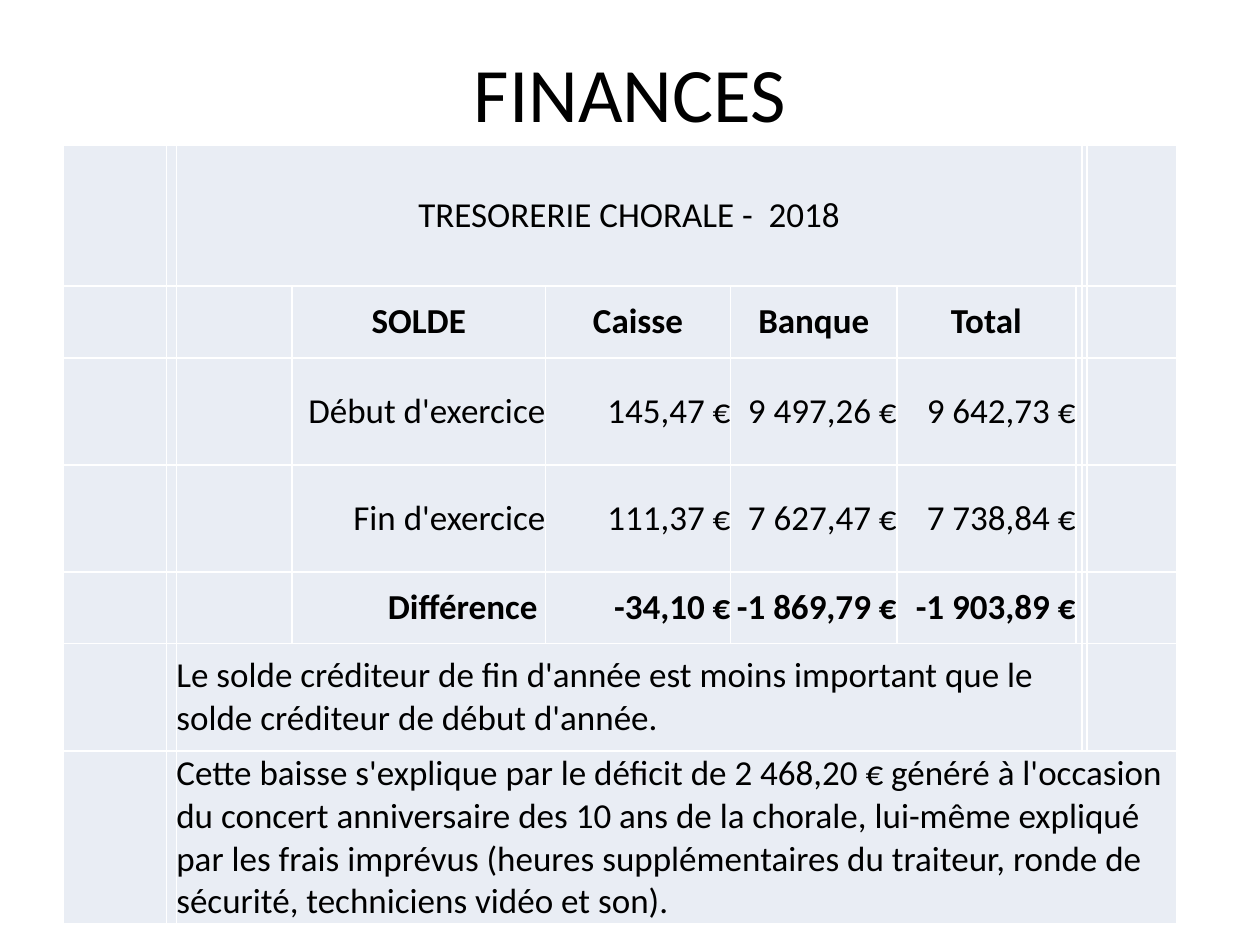
from lxml.etree import SubElement
from pptx import Presentation
from pptx.dml.color import RGBColor
from pptx.enum.text import MSO_ANCHOR, PP_ALIGN
from pptx.oxml.ns import qn
from pptx.util import Inches, Pt

COLORS = {"text": "000000", "cell": "E9EDF4", "border": "FFFFFF"}
GRID_COLUMNS, GRID_ROWS = 10, 7.5
COLUMN_WIDTHS = [0.82, 0.08, 0.92, 2.01, 1.47, 1.32, 1.42, 0.05, 0.03, 0.71]
ROW_HEIGHTS = [1.12, 0.57, 0.85, 0.85, 0.57, 0.85, 1.37]
FIRST_TEXT_COLUMN, FIRST_BALANCE_COLUMN = 2, 3
BALANCES = [
    ["SOLDE", "Caisse", "Banque", "Total"],
    ["Début d'exercice", "145,47 €", "9 497,26 €", "9 642,73 €"],
    ["Fin d'exercice", "111,37 €", "7 627,47 €", "7 738,84 €"],
    ["Différence ", "-34,10 €", "-1 869,79 €", "-1 903,89 €"],
]
HEADING = "TRESORERIE CHORALE -  2018"
SUMMARY = (
    "Le solde créditeur de fin d'année est moins important que le "
    "solde créditeur de début d'année."
)
EXPLANATION = (
    "Cette baisse s'explique par le déficit de 2 468,20 € généré à l'occasion "
    "du concert anniversaire des 10 ans de la chorale, lui-même expliqué "
    "par les frais imprévus (heures supplémentaires du traiteur, ronde de "
    "sécurité, techniciens vidéo et son)."
)


class SlideBuilder:
    """Holds the style and the current slide, and adds its elements."""

    font_name = "Calibri"
    title_size = 44
    table_size = 20

    def __init__(self, presentation):
        """Add a title-only slide and measure its grid."""
        self.column = presentation.slide_width / GRID_COLUMNS
        self.row = presentation.slide_height / GRID_ROWS
        self.slide = presentation.slides.add_slide(presentation.slide_layouts[5])

    def box(self, left, top, width, height):
        """Convert grid columns and rows to slide lengths."""
        return (
            round(left * self.column),
            round(top * self.row),
            round(width * self.column),
            round(height * self.row),
        )

    def add_text(self, text_frame, text, size, alignment, bold=False):
        """Add one formatted run to the first paragraph."""
        paragraph = text_frame.paragraphs[0]
        paragraph.alignment = alignment
        run = paragraph.add_run()
        run.text = text
        run.font.name = self.font_name
        run.font.size = Pt(size)
        run.font.bold = bold
        run.font.color.rgb = RGBColor.from_string(COLORS["text"])

    def title(self, text, *place):
        """Place and fill the title placeholder."""
        shape = self.slide.shapes.title
        shape.left, shape.top, shape.width, shape.height = self.box(*place)
        shape.text_frame.vertical_anchor = MSO_ANCHOR.MIDDLE
        self.add_text(shape.text_frame, text, self.title_size, PP_ALIGN.CENTER)

    def table(self, left, top, widths, heights):
        """Add a plain table with the given columns and rows."""
        place = self.box(left, top, sum(widths), sum(heights))
        table = self.slide.shapes.add_table(len(heights), len(widths), *place).table
        table.first_row = table.horz_banding = False
        for table_column, width in zip(table.columns, widths):
            table_column.width = round(width * self.column)
        for table_row, height in zip(table.rows, heights):
            table_row.height = round(height * self.row)
        for cell in table.iter_cells():
            self.style_cell(cell)
        return table

    def style_cell(self, cell):
        """Give a cell its borders, fill and zero margins."""
        cell.margin_left = cell.margin_right = 0
        cell.margin_top = cell.margin_bottom = 0
        cell.vertical_anchor = MSO_ANCHOR.MIDDLE
        properties = cell._tc.get_or_add_tcPr()
        for side in ("lnL", "lnR", "lnT", "lnB"):
            line = SubElement(properties, qn(f"a:{side}"), w=str(Pt(1)))
            solid = SubElement(line, qn("a:solidFill"))
            SubElement(solid, qn("a:srgbClr"), val=COLORS["border"])
        cell.fill.solid()
        cell.fill.fore_color.rgb = RGBColor.from_string(COLORS["cell"])

    def cell_text(self, cell, text, alignment, bold=False):
        """Add text to a table cell."""
        self.add_text(cell.text_frame, text, self.table_size, alignment, bold)

    def merged_text(self, table, row, last_column, text, alignment):
        """Merge a row's cells up to a column and add text to them."""
        cell = table.cell(row, FIRST_TEXT_COLUMN)
        cell.merge(table.cell(row, last_column))
        self.cell_text(cell, text, alignment)
        return cell


def main():
    """Build and save the treasury slide."""
    presentation = Presentation()
    presentation.slide_width = Inches(GRID_COLUMNS)
    presentation.slide_height = Inches(GRID_ROWS)
    builder = SlideBuilder(presentation)
    builder.title("FINANCES", 0.5, 0.3, 9, 0.85)
    table = builder.table(0.5, 1.15, COLUMN_WIDTHS, ROW_HEIGHTS)

    builder.merged_text(table, 0, 7, HEADING, PP_ALIGN.CENTER)
    for row, values in enumerate(BALANCES, start=1):
        is_header = row == 1
        alignment = PP_ALIGN.CENTER if is_header else PP_ALIGN.RIGHT
        bold = is_header or row == len(BALANCES)
        for column, text in enumerate(values, start=FIRST_BALANCE_COLUMN):
            builder.cell_text(table.cell(row, column), text, alignment, bold)
    builder.merged_text(table, 5, 7, SUMMARY, PP_ALIGN.LEFT)
    explanation = builder.merged_text(table, 6, 9, EXPLANATION, PP_ALIGN.LEFT)
    explanation.vertical_anchor = MSO_ANCHOR.BOTTOM
    presentation.save("out.pptx")


if __name__ == "__main__":
    main()
